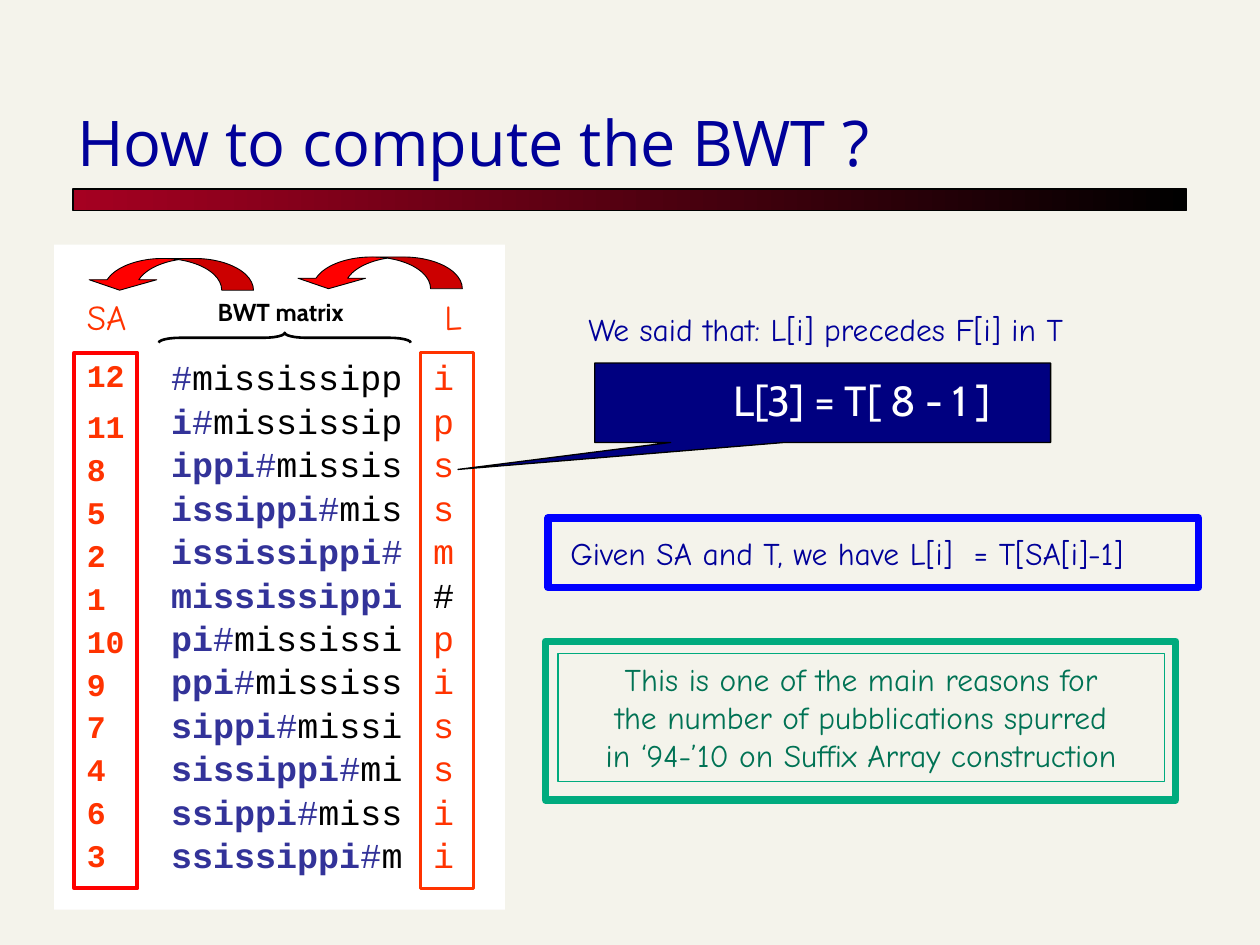
from dataclasses import dataclass

from pptx import Presentation
from pptx.dml.color import RGBColor
from pptx.enum.shapes import MSO_SHAPE
from pptx.enum.text import MSO_ANCHOR, MSO_AUTO_SIZE, PP_ALIGN
from pptx.util import Cm, Pt


@dataclass(frozen=True)
class Theme:
    back: str = "F4F3EB"
    white: str = "FFFFFF"
    black: str = "000000"
    wine: str = "A50021"
    blue: str = "000099"
    navy: str = "000080"
    frame: str = "0000FF"
    indigo: str = "333399"
    red: str = "FF0000"
    orange: str = "FF3300"
    green: str = "00AB7E"
    forest: str = "007254"
    head: str = "Open Sans"
    sans: str = "Cabin"
    hand: str = "Comic Neue"
    mono: str = "Courier New"
    title: int = 36
    call: int = 24
    big: int = 20
    mid: int = 18
    small: int = 14


def draw(kind, spot, fill=None, line=None, width=0.75):
    shape = deck.add_shape(kind, *map(Cm, spot))
    shape.shadow.inherit = False
    if fill:
        shape.fill.solid()
        shape.fill.fore_color.rgb = RGBColor.from_string(fill)
    else:
        shape.fill.background()
    if line:
        shape.line.color.rgb = RGBColor.from_string(line)
        shape.line.width = Pt(width)
    else:
        shape.line.fill.background()
    return shape


def write(shape, text, font, size, color, bold=False, align=PP_ALIGN.LEFT):
    frame = shape.text_frame
    frame.text = text
    frame.word_wrap = True
    frame.auto_size = MSO_AUTO_SIZE.NONE
    frame.vertical_anchor = MSO_ANCHOR.TOP
    for para in frame.paragraphs:
        para.alignment = align
        for run in para.runs:
            run.font.name = font
            run.font.size = Pt(size)
            run.font.bold = bold
            run.font.color.rgb = RGBColor.from_string(color)
    return frame


theme = Theme()
show = Presentation()
show.slide_width, show.slide_height = Cm(25.4), Cm(19.05)
slide = show.slides.add_slide(show.slide_layouts[5])
deck = slide.shapes
slide.background.fill.solid()
slide.background.fill.fore_color.rgb = RGBColor.from_string(theme.back)

# Title and rule
title = deck.title
title.left, title.top, title.width, title.height = map(Cm, (1.3, 2.26, 21.59, 1.47))
frame = write(title, "How to compute the BWT ?", theme.head, theme.title, theme.blue)
frame.vertical_anchor = MSO_ANCHOR.BOTTOM

rule = draw(MSO_SHAPE.RECTANGLE, (1.47, 3.81, 22.45, 0.43), line=theme.black)
rule.fill.gradient()
rule.fill.gradient_angle = 0
for stop, color in zip(rule.fill.gradient_stops, (theme.wine, theme.black)):
    stop.color.rgb = RGBColor.from_string(color)

# Panel with brace, arrows and column heads
draw(MSO_SHAPE.RECTANGLE, (1.09, 4.93, 9.09, 13.41), theme.white)
brace = draw(MSO_SHAPE.LEFT_BRACE, (5.64, 4.27, 0.2, 5.08), line=theme.black, width=1.5)
brace.rotation = 90
brace.adjustments[0] = 2.17

for left, top in ((5.94, 5.18), (1.73, 5.21)):
    arrow = draw(MSO_SHAPE.CURVED_UP_ARROW, (left, top, 3.38, 0.64),
                 theme.red, theme.black, 0.5)
    arrow.rotation = 180
    for i, value in enumerate((1.07, 2.13, 0.33)):
        arrow.adjustments[i] = value

# The matrix follows from the text and its suffix array
word = "mississippi#"
order = (12, 11, 8, 5, 2, 1, 10, 9, 7, 4, 6, 3)
rows = [word[n - 1:] + word[:n - 1] for n in order]
gap = Pt(2)

grid = deck.add_textbox(*map(Cm, (3.2, 7.11, 6, 10.82))).text_frame
grid.word_wrap = True
for i, row in enumerate(rows):
    para = grid.paragraphs[0] if i == 0 else grid.add_paragraph()
    para.line_spacing = 0.95
    para.space_before = gap
    head, mark, tail = row[:-1].partition("#")
    for text, color, bold in ((head, theme.indigo, True), (mark, theme.indigo, False),
                              (tail, theme.black, False)):
        if text:
            run = para.add_run()
            run.text = text
            run.font.name = theme.mono
            run.font.size = Pt(theme.big)
            run.font.bold = bold
            run.font.color.rgb = RGBColor.from_string(color)

last = draw(MSO_SHAPE.RECTANGLE, (8.48, 7.11, 1.07, 10.8), line=theme.orange, width=2)
frame = write(last, "\n".join(row[-1] for row in rows), theme.mono, theme.big, theme.orange)
frame.margin_right = 0
for para in frame.paragraphs:
    para.line_spacing = 0.95
    para.space_before = gap
    if para.text == "#":
        para.runs[0].font.color.rgb = RGBColor.from_string(theme.black)

array = draw(MSO_SHAPE.RECTANGLE, (1.5, 7.11, 1.27, 10.8), line=theme.red, width=2.25)
frame = write(array, "\n".join(map(str, order)), theme.mono, theme.mid, theme.orange, True)
frame.margin_right = 0
for i, para in enumerate(frame.paragraphs):
    para.line_spacing = {0: 0.95, 1: 1.25}.get(i, 1.05)
    para.space_before = Pt(1.8)

# Frames and callout on the right
draw(MSO_SHAPE.RECTANGLE, (11.05, 10.44, 13.11, 1.4), line=theme.frame, width=4.25)
draw(MSO_SHAPE.RECTANGLE, (11, 12.93, 12.7, 3.2), line=theme.green, width=4.25)

call = draw(MSO_SHAPE.RECTANGULAR_CALLOUT, (11.99, 7.32, 9.19, 1.6),
            theme.navy, theme.black)
call.adjustments[0], call.adjustments[1] = -0.8, 0.84
frame = write(call, "\tL[3] = T[ 8 - 1 ]", theme.sans, theme.call, theme.white)
frame.margin_left = Cm(1.52)
frame.paragraphs[0].line_spacing = 1.1

note = draw(MSO_SHAPE.RECTANGLE, (11.25, 13.18, 12.22, 2.57), line=theme.green)
write(note, "This is one of the main reasons for\n"
      "the number of pubblications spurred\n"
      "in ‘94-’10 on Suffix Array construction",
      theme.hand, theme.mid, theme.forest, align=PP_ALIGN.CENTER)

# Free labels
labels = (
    ((4.14, 5.87, 3.45, 0.84), "BWT matrix", theme.sans, theme.small, theme.black, True),
    ((8.71, 5.84, 0.89, 1.09), "L", theme.hand, theme.big, theme.orange, False),
    ((1.5, 5.84, 1.52, 1.09), "SA", theme.hand, theme.big, theme.orange, False),
    ((11.61, 6.12, 11.2, 1.02), "We said that: L[i] precedes F[i] in T",
     theme.hand, theme.mid, theme.blue, False),
    ((11.25, 10.64, 12.83, 1.02), "Given SA and T, we have L[i]  = T[SA[i]-1]",
     theme.hand, theme.mid, theme.blue, False),
)
for spot, *style in labels:
    write(deck.add_textbox(*map(Cm, spot)), *style)

show.save("out.pptx")
